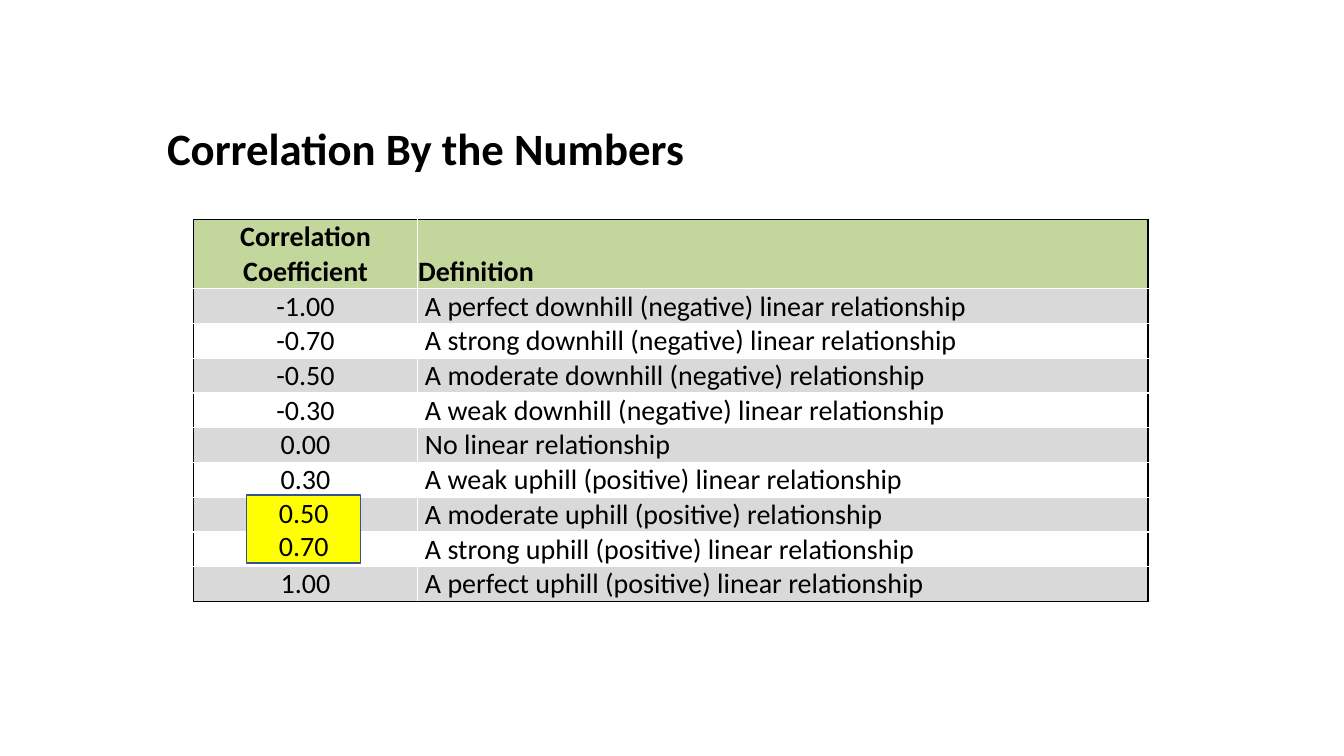
from lxml.etree import SubElement
from pptx import Presentation
from pptx.dml.color import RGBColor
from pptx.enum.shapes import MSO_SHAPE
from pptx.enum.text import MSO_ANCHOR, MSO_AUTO_SIZE, PP_ALIGN
from pptx.oxml.ns import qn
from pptx.util import Cm, Pt

COLORS = {
    "text": "000000",
    "edge": "000000",
    "grid": "FFFFFF",
    "head": "C3D69B",
    "band": "D9D9D9",
    "mark": "FFFF00",
    "rim": "325491",
}
FONT = "Calibri"
HEAD = ("Correlation Coefficient", "Definition")
ROWS = [
    ("-1.00", "A perfect downhill (negative) linear relationship"),
    ("-0.70", "A strong downhill (negative) linear relationship"),
    ("-0.50", "A moderate downhill (negative) relationship"),
    ("-0.30", "A weak downhill (negative) linear relationship"),
    ("0.00", "No linear relationship"),
    ("0.30", "A weak uphill (positive) linear relationship"),
    ("0.50", "A moderate uphill (positive) relationship"),
    ("0.70", "A strong uphill (positive) linear relationship"),
    ("1.00", "A perfect uphill (positive) linear relationship"),
]


def color(name):
    return RGBColor.from_string(COLORS[name])


def style(frame, size, bold=False, align=PP_ALIGN.LEFT):
    for para in frame.paragraphs:
        para.alignment = align
        for run in para.runs:
            run.font.name = FONT
            run.font.size = Pt(size)
            run.font.bold = bold
            run.font.color.rgb = color("text")


def add_edges(cell, outer):
    props = cell._tc.get_or_add_tcPr()
    for side in "LRTB":
        line = SubElement(props, qn(f"a:ln{side}"), w=str(Pt(1)))
        fill = SubElement(line, qn("a:solidFill"))
        name = "edge" if side in outer else "grid"
        SubElement(fill, qn("a:srgbClr"), val=COLORS[name])


def fill_cell(cell, text, row, col, last):
    outer = "LR"[col]
    if row == 0:
        outer += "T"
    if row == last:
        outer += "B"
    add_edges(cell, outer)
    if row == 0 or row % 2:
        cell.fill.solid()
        cell.fill.fore_color.rgb = color("band" if row else "head")
    else:
        cell.fill.background()
    cell.vertical_anchor = MSO_ANCHOR.BOTTOM
    cell.margin_left = Cm(0.19 if row and col else 0.02)
    cell.margin_right = Cm(0.02)
    cell.margin_top = Cm(0.01)
    cell.margin_bottom = 0
    cell.text_frame.text = text
    align = PP_ALIGN.LEFT if col else PP_ALIGN.CENTER
    style(cell.text_frame, 20, row == 0, align)


def add_grid(slide):
    data = [HEAD, *ROWS]
    frame = slide.shapes.add_table(
        len(data), len(HEAD), Cm(4.88), Cm(5.54), Cm(24.05), Cm(9.24))
    table = frame.table
    table.horz_banding = False
    for col, width in zip(table.columns, (5.64, 18.41)):
        col.width = Cm(width)
    for row, texts in enumerate(data):
        table.rows[row].height = Cm(0.84 if row else 1.68)
        for col, text in enumerate(texts):
            fill_cell(table.cell(row, col), text, row, col, len(ROWS))


def add_title(slide, text):
    box = slide.shapes.add_textbox(Cm(3.96), Cm(2.92), Cm(13.69), Cm(1.63))
    frame = box.text_frame
    frame.word_wrap = False
    frame.auto_size = MSO_AUTO_SIZE.SHAPE_TO_FIT_TEXT
    frame.text = text
    style(frame, 32, bold=True)


def add_mark(slide, text):
    box = slide.shapes.add_shape(
        MSO_SHAPE.RECTANGLE, Cm(6.22), Cm(12.47), Cm(2.87), Cm(1.72))
    box.shadow.inherit = False
    box.fill.solid()
    box.fill.fore_color.rgb = color("mark")
    box.line.color.rgb = color("rim")
    box.line.width = Pt(1)
    frame = box.text_frame
    frame.vertical_anchor = MSO_ANCHOR.MIDDLE
    frame.text = text
    style(frame, 20, align=PP_ALIGN.CENTER)


def main():
    deck = Presentation()
    deck.slide_width = Cm(33.87)
    deck.slide_height = Cm(19.05)
    slide = deck.slides.add_slide(deck.slide_layouts[6])
    add_grid(slide)
    add_title(slide, "Correlation By the Numbers")
    add_mark(slide, "0.50\n0.70")
    deck.save("out.pptx")


if __name__ == "__main__":
    main()
